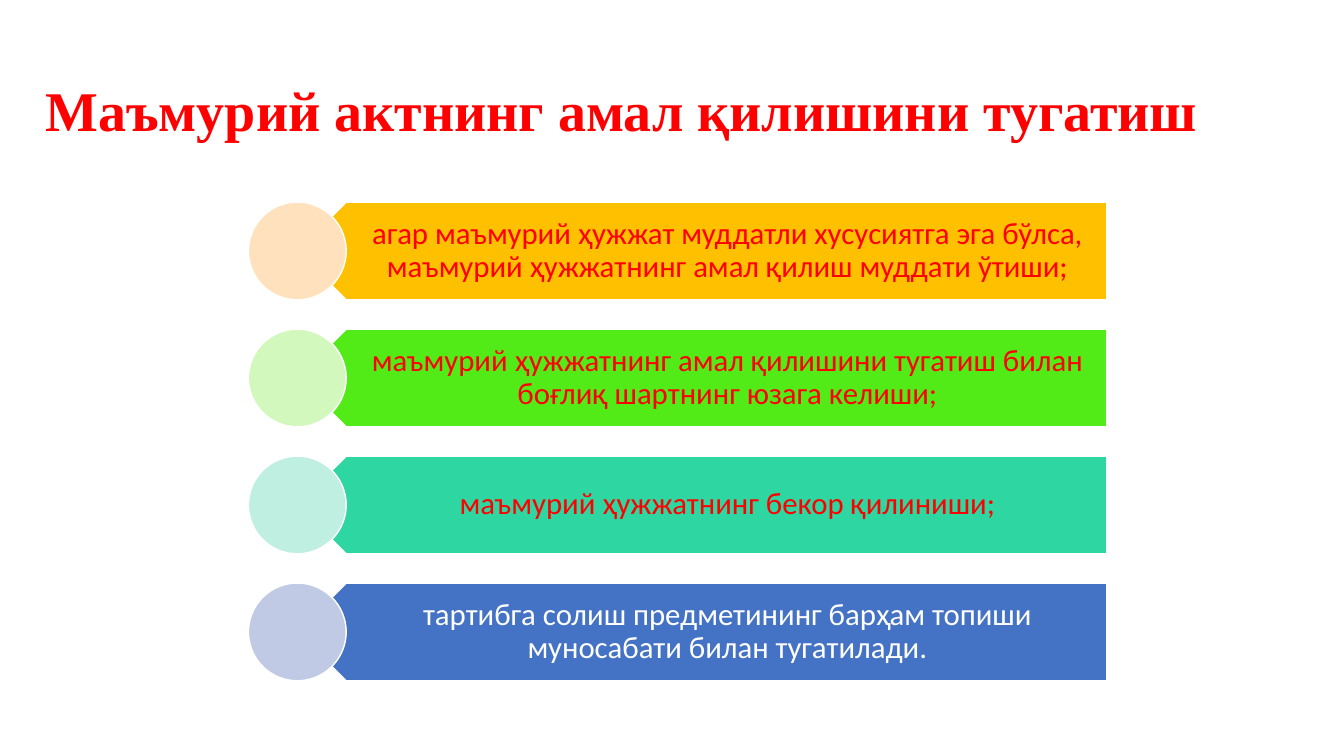
"""Build a slide listing four grounds for ending an administrative act."""
from dataclasses import dataclass

from pptx import Presentation
from pptx.dml.color import RGBColor
from pptx.enum.shapes import MSO_SHAPE
from pptx.enum.text import MSO_ANCHOR, MSO_AUTO_SIZE, PP_ALIGN
from pptx.util import Pt


@dataclass(frozen=True)
class Theme:
    """Colours, fonts and type sizes of the slide."""
    red: str = "FF0000"
    white: str = "FFFFFF"
    title_font: str = "Times New Roman"
    body_font: str = "Calibri"
    title_size: int = 40
    body_size: int = 22
    bars: tuple = ("FFC000", "53EB17", "2ED7A1", "4472C4")
    circles: tuple = ("FFE2BD", "D3F8BD", "BEEFE0", "C1CAE4")


def add_filled_shape(page, kind, left, top, width, height, colour):
    """Add a shadowless shape with a thin white outline."""
    shape = page.shapes.add_shape(kind, Pt(left), Pt(top), Pt(width), Pt(height))
    shape.shadow.inherit = False
    shape.fill.solid()
    shape.fill.fore_color.rgb = RGBColor.from_string(colour)
    shape.line.color.rgb = RGBColor.from_string(theme.white)
    shape.line.width = Pt(1)
    return shape


def format_text(frame, text, font, size, colour, align):
    """Fill a text frame with one vertically centred paragraph."""
    frame.word_wrap = True
    frame.auto_size = MSO_AUTO_SIZE.NONE
    frame.vertical_anchor = MSO_ANCHOR.MIDDLE
    para = frame.paragraphs[0]
    para.text = text
    para.alignment = align
    para.line_spacing = 0.9
    para.font.name = font
    para.font.size = Pt(size)
    para.font.color.rgb = RGBColor.from_string(colour)
    return para


theme = Theme()
deck = Presentation()
deck.slide_width, deck.slide_height = Pt(960), Pt(540)
page = deck.slides.add_slide(deck.slide_layouts[5])

title = page.shapes.title
title.left, title.top, title.width, title.height = Pt(25.2), Pt(28.8), Pt(917.3), Pt(104.4)
heading = format_text(title.text_frame, "Маъмурий актнинг амал қилишини тугатиш",
                      theme.title_font, theme.title_size, theme.red, PP_ALIGN.LEFT)
heading.font.bold = True

grounds = [
    ("агар маъмурий ҳужжат муддатли хусусиятга эга бўлса, "
     "маъмурий ҳужжатнинг амал қилиш муддати ўтиши;", theme.red),
    ("маъмурий ҳужжатнинг амал қилишини тугатиш билан "
     "боғлиқ шартнинг юзага келиши;", theme.red),
    ("маъмурий ҳужжатнинг бекор қилиниши;", theme.red),
    ("тартибга солиш предметининг барҳам топиши "
     "муносабати билан тугатилади.", theme.white),
]
first_top, row_step, row_height = 144.4, 90.7, 69.8
bar_left, bar_width = 212.4, 578.2
text_left = 229.7
text_width = bar_left + bar_width - text_left

for row, (text, text_colour) in enumerate(grounds):
    top = first_top + row * row_step
    bar = add_filled_shape(page, MSO_SHAPE.PENTAGON, bar_left, top,
                           bar_width, row_height, theme.bars[row])
    bar.rotation = 180

    box = page.shapes.add_textbox(Pt(text_left), Pt(top), Pt(text_width), Pt(row_height))
    frame = box.text_frame
    frame.margin_left, frame.margin_right = Pt(31), Pt(12.2)
    frame.margin_top = frame.margin_bottom = Pt(6.5)
    format_text(frame, text, theme.body_font, theme.body_size, text_colour, PP_ALIGN.CENTER)

    add_filled_shape(page, MSO_SHAPE.OVAL, bar_left - row_height / 2, top,
                     row_height, row_height, theme.circles[row])

deck.save("out.pptx")
